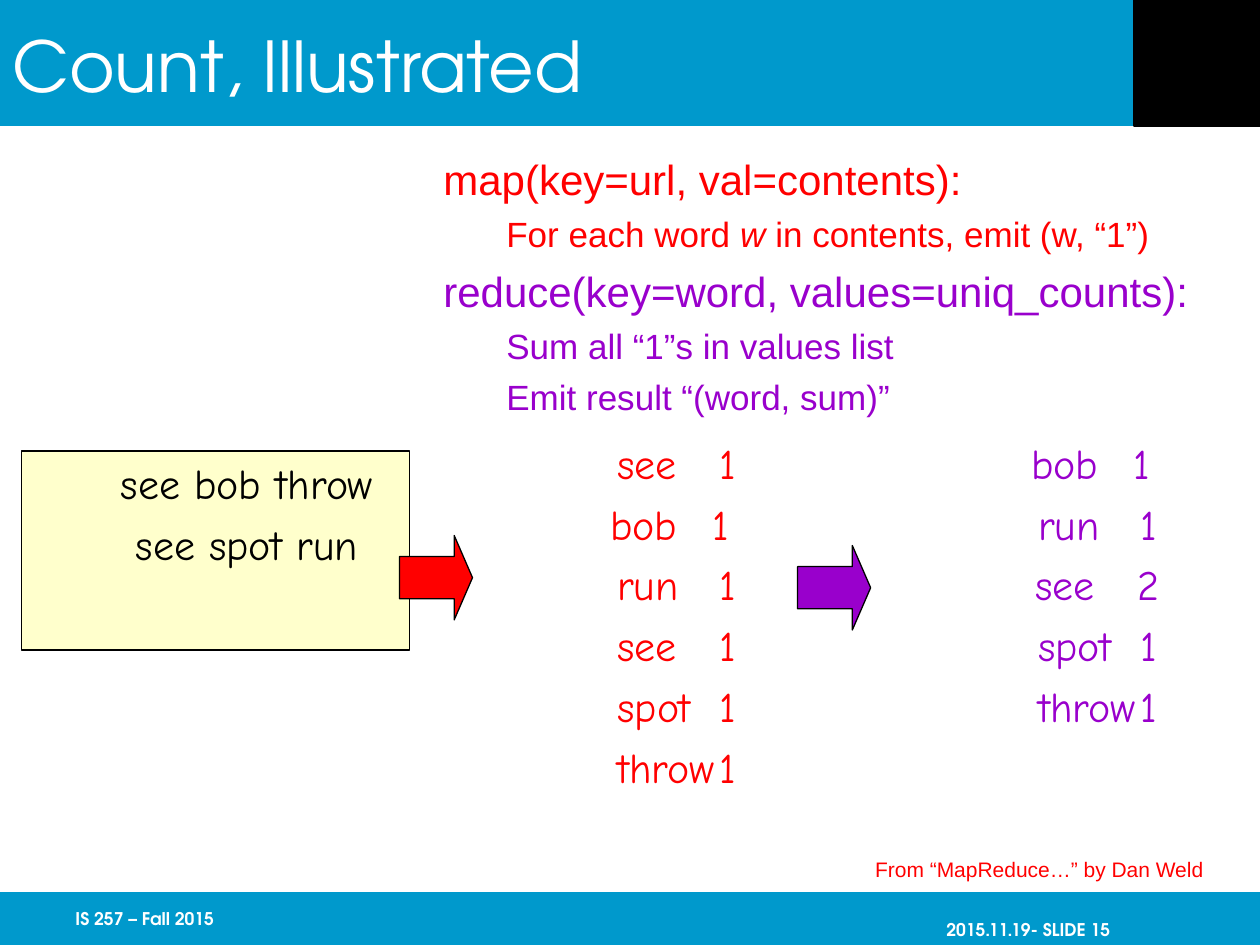
from pptx import Presentation
from pptx.dml.color import RGBColor
from pptx.enum.shapes import MSO_SHAPE
from pptx.enum.text import MSO_ANCHOR, PP_ALIGN
from pptx.util import Inches, Pt

BLUE, RED, PURPLE = "0099CC", "FF0000", "9900CC"
BLACK, WHITE, CREAM = "000000", "FFFFFF", "FFFFCC"
HEADING_FONT, CODE_FONT, WORD_FONT = "TeX Gyre Adventor", "Arial", "Comic Neue"


def color(value):
    return RGBColor.from_string(value)


def add_block(slide, box, fill, outlined=False, kind=MSO_SHAPE.RECTANGLE):
    shape = slide.shapes.add_shape(kind, *map(Inches, box))
    shape.shadow.inherit = False
    shape.fill.solid()
    shape.fill.fore_color.rgb = color(fill)
    if outlined:
        shape.line.color.rgb = color(BLACK)
        shape.line.width = Pt(0.75)
    else:
        shape.line.fill.background()
    return shape


def add_text_box(slide, box, anchor=MSO_ANCHOR.TOP):
    shape = slide.shapes.add_textbox(*map(Inches, box))
    shape.text_frame.word_wrap = True
    shape.text_frame.vertical_anchor = anchor
    return shape


def format_font(font, name, size, value, bold=False):
    font.name = name
    font.size = Pt(size)
    font.bold = bold
    font.color.rgb = color(value)


def indent(paragraph, left, first_line):
    properties = paragraph._p.get_or_add_pPr()
    properties.set("marL", str(Inches(left)))
    properties.set("indent", str(Inches(first_line)))


def add_line(slide, box, text, font, size, value, align=PP_ALIGN.LEFT, bold=False):
    shape = add_text_box(slide, box, MSO_ANCHOR.MIDDLE)
    shape.text_frame.text = text
    paragraph = shape.text_frame.paragraphs[0]
    paragraph.alignment = align
    format_font(paragraph.runs[0].font, font, size, value, bold)
    return shape


def add_header(slide, box, title):
    left, top, width, height = box
    add_block(slide, box, BLUE)
    add_block(slide, (left + width - height, top, height, height), BLACK, True)
    add_line(slide, (left, top + 0.02, width - height, height - 0.02),
             title, HEADING_FONT, 40, WHITE)


def add_footer(slide, box, course, number):
    left, top, width, height = box
    add_block(slide, box, BLUE)
    add_line(slide, (left + 0.5, top, 2.08, height), course,
             HEADING_FONT, 10, WHITE, bold=True)
    label = add_line(slide, (left + 6.73, top + 0.18, 2.08, height - 0.18), number,
                     HEADING_FONT, 10, WHITE, PP_ALIGN.RIGHT, True)
    frame = label.text_frame
    frame.margin_right = frame.margin_top = frame.margin_bottom = 0


def add_functions(slide, box, lines):
    frame = add_text_box(slide, box).text_frame
    for index, (level, value, parts) in enumerate(lines):
        paragraph = frame.paragraphs[0] if index == 0 else frame.add_paragraph()
        size = 24 if level == 1 else 20
        indent(paragraph, 0.5 * level, 0)
        if index:
            paragraph.space_before = Pt(size / 4)
        for position, part in enumerate(parts):
            run = paragraph.add_run()
            run.text = part
            format_font(run.font, CODE_FONT, size, value)
            run.font.italic = position % 2 == 1


def add_words(shape, lines, value):
    frame = shape.text_frame
    frame.word_wrap = True
    frame.vertical_anchor = MSO_ANCHOR.TOP
    for index, line in enumerate(lines):
        paragraph = frame.paragraphs[0] if index == 0 else frame.add_paragraph()
        paragraph.text = line
        paragraph.alignment = PP_ALIGN.CENTER
        indent(paragraph, 0.81, -0.31)
        if index:
            paragraph.space_before = Pt(6)
        format_font(paragraph.runs[0].font, WORD_FONT, 24, value)


def add_arrow(slide, box, fill):
    arrow = add_block(slide, box, fill, True, MSO_SHAPE.RIGHT_ARROW)
    arrow.adjustments[0] = 0.5
    arrow.adjustments[1] = 0.25


def add_word_count(slide, box):
    left, top, width, height = box
    document = add_block(slide, (left + 0.17, top + 0.16, width, height), CREAM, True)
    add_words(document, ["see bob throw", "see spot run"], BLACK)
    mapped = add_text_box(slide, (left + 3.58, top, width, height))
    add_words(mapped, ["see\t1", "bob\t1 ", "run\t1", "see \t1", "spot \t1", "throw\t1"], RED)
    reduced = add_text_box(slide, (left + 6.92, top, width, height))
    add_words(reduced, ["bob\t1 ", "run\t1", "see \t2", "spot \t1", "throw\t1"], PURPLE)
    add_arrow(slide, (left + 3.17, top + 0.83, 0.58, 0.67), RED)
    add_arrow(slide, (left + 6.33, top + 0.91, 0.58, 0.67), PURPLE)


def main():
    presentation = Presentation()
    presentation.slide_width = Inches(10)
    presentation.slide_height = Inches(7.5)
    slide = presentation.slides.add_slide(presentation.slide_layouts[6])
    add_header(slide, (0, 0, 10, 1), "Count, Illustrated")
    add_functions(slide, (2.92, 1.17, 6.92, 2.25), [
        (1, RED, ["map(key=url, val=contents):"]),
        (2, RED, ["For each word ", "w", " in contents, emit (w, “1”)"]),
        (1, PURPLE, ["reduce(key=word, values=uniq_counts):"]),
        (2, PURPLE, ["Sum all “1”s in values list"]),
        (2, PURPLE, ["Emit result “(word, sum)”"]),
    ])
    add_word_count(slide, (0, 3.42, 3.08, 1.58))
    credit = add_line(slide, (6.83, 6.75, 2.84, 0.3), "From “MapReduce…” by Dan Weld",
                      CODE_FONT, 12, RED, PP_ALIGN.CENTER)
    credit.text_frame.word_wrap = False
    add_footer(slide, (0, 7.08, 10, 0.42), "IS 257 – Fall 2015", "2015.11.19- SLIDE 15")
    presentation.save("out.pptx")


if __name__ == "__main__":
    main()
